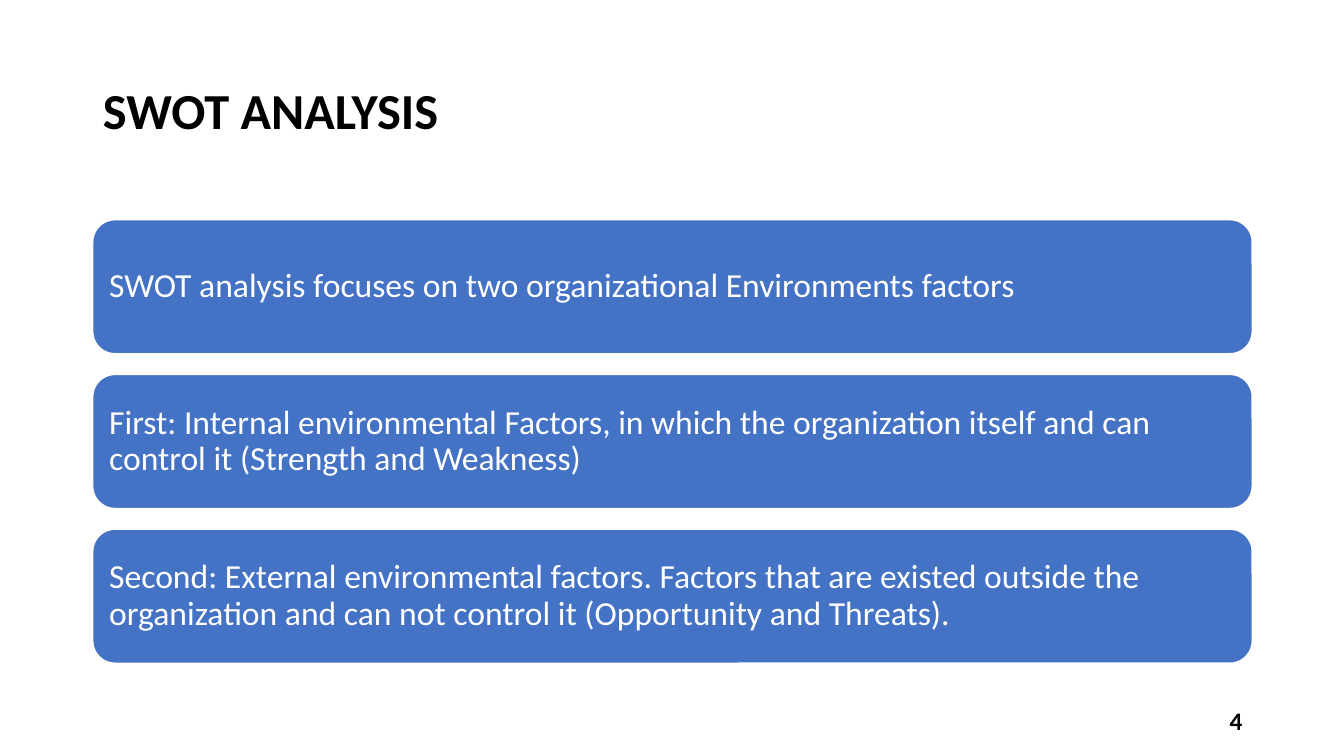
from pptx import Presentation
from pptx.dml.color import RGBColor
from pptx.enum.shapes import MSO_SHAPE
from pptx.enum.text import MSO_ANCHOR, PP_ALIGN
from pptx.util import Inches, Pt

ROUNDED = MSO_SHAPE.ROUNDED_RECTANGLE
MIDDLE = MSO_ANCHOR.MIDDLE
LEFT, RIGHT = PP_ALIGN.LEFT, PP_ALIGN.RIGHT
TITLE_ONLY = 5
BLACK, WHITE, BLUE = "000000", "FFFFFF", "4472C4"

MARGIN, CONTENT_WIDTH = 0.92, 11.5
CARD_TOP, LAST_CARD_TOP, CARD_HEIGHT = 2.18, 5.25, 1.33
FACTORS = [
    "SWOT analysis focuses on two organizational Environments factors",
    "First: Internal environmental Factors, in which the organization itself "
    "and can control it (Strength and Weakness)",
    "Second: External environmental factors. Factors that are existed outside "
    "the organization and can not control it (Opportunity and Threats).",
]


def color(value):
    """Turn a hex string into a colour."""
    return RGBColor.from_string(value)


class SlideBuilder:
    """Hold the slide and its text style."""

    font_name = "Calibri"

    def __init__(self, slide):
        """Keep the slide to build on."""
        self.slide = slide

    def add_text(self, shape, text, size, text_color, bold=False, align=LEFT, spacing=1.0):
        """Add one formatted paragraph, centred vertically."""
        frame = shape.text_frame
        frame.word_wrap = True
        frame.vertical_anchor = MIDDLE
        paragraph = frame.paragraphs[0]
        paragraph.alignment = align
        paragraph.line_spacing = spacing
        run = paragraph.add_run()
        run.text = text
        run.font.name = self.font_name
        run.font.size = Pt(size)
        run.font.bold = bold
        run.font.color.rgb = color(text_color)

    def title(self, text, left, top, width, height):
        """Place and fill the title placeholder."""
        shape = self.slide.shapes.title
        shape.left, shape.top = Inches(left), Inches(top)
        shape.width, shape.height = Inches(width), Inches(height)
        self.add_text(shape, text, 36, BLACK, bold=True, spacing=0.9)

    def card(self, text, left, top, width, height):
        """Draw a rounded card with its text."""
        shape = self.slide.shapes.add_shape(
            ROUNDED, Inches(left), Inches(top), Inches(width), Inches(height))
        shape.shadow.inherit = False
        shape.fill.solid()
        shape.fill.fore_color.rgb = color(BLUE)
        shape.line.color.rgb = color(WHITE)
        shape.line.width = Pt(1)
        frame = shape.text_frame
        frame.margin_left = frame.margin_right = Inches(0.1)
        frame.margin_top = frame.margin_bottom = Inches(0.1)
        self.add_text(shape, text, 24, WHITE, spacing=0.9)

    def page_number(self, text, left, top, width, height):
        """Add the page number, aligned right."""
        box = self.slide.shapes.add_textbox(
            Inches(left), Inches(top), Inches(width), Inches(height))
        self.add_text(box, text, 18, BLACK, bold=True, align=RIGHT)


def main():
    """Build and save the slide."""
    presentation = Presentation()
    presentation.slide_width = Inches(13.33)
    presentation.slide_height = Inches(7.5)
    slide = presentation.slides.add_slide(presentation.slide_layouts[TITLE_ONLY])
    builder = SlideBuilder(slide)
    builder.title("SWOT ANALYSIS", MARGIN, 0.4, CONTENT_WIDTH, 1.45)
    pitch = (LAST_CARD_TOP - CARD_TOP) / (len(FACTORS) - 1)
    for index, factor in enumerate(FACTORS):
        builder.card(factor, MARGIN, CARD_TOP + index * pitch, CONTENT_WIDTH, CARD_HEIGHT)
    builder.page_number("4", 9.42, 6.95, 3, 0.4)
    presentation.save("out.pptx")


if __name__ == "__main__":
    main()
